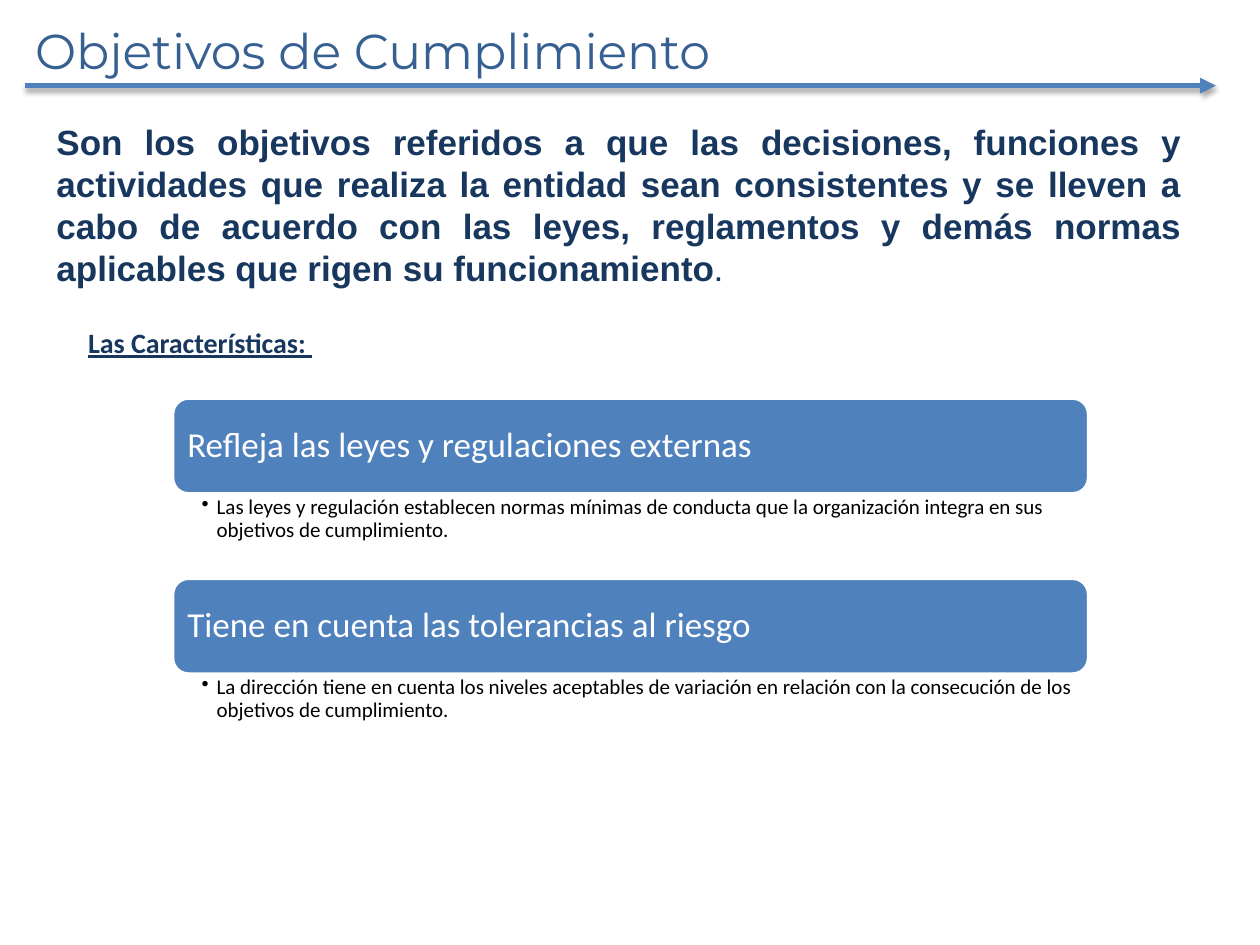
from lxml import etree
from pptx import Presentation
from pptx.dml.color import RGBColor
from pptx.enum.shapes import MSO_CONNECTOR, MSO_SHAPE
from pptx.enum.text import MSO_ANCHOR, PP_ALIGN
from pptx.oxml import parse_xml
from pptx.oxml.ns import nsdecls, qn
from pptx.util import Inches, Pt

LEFT, JUSTIFY = PP_ALIGN.LEFT, PP_ALIGN.JUSTIFY
TOP, MIDDLE = MSO_ANCHOR.TOP, MSO_ANCHOR.MIDDLE
C = {"title": "376092", "navy": "17375E", "blue": "4F81BD",
     "white": "FFFFFF", "black": "000000"}


def write(sp, text, size, color, font="Calibri", bold=False, underline=False,
          align=LEFT, anchor=MIDDLE, insets=(0.1, 0.05, 0.1, 0.05),
          spacing=None, indent=0, bullet=None):
    """Fill a shape with one paragraph and return that paragraph."""
    tf = sp.text_frame
    tf.word_wrap = True
    tf.vertical_anchor = anchor
    tf.margin_left, tf.margin_top, tf.margin_right, tf.margin_bottom = map(Inches, insets)
    p = tf.paragraphs[0]
    p.alignment = align
    if spacing:
        p.line_spacing = spacing
    pPr = p._p.get_or_add_pPr()
    if indent:
        pPr.set("marL", str(Inches(indent)))
    if bullet:
        pPr.set("indent", str(-Inches(indent)))
        etree.SubElement(pPr, qn("a:buChar")).set("char", bullet)
    r = p.add_run()
    r.text = text
    r.font.size, r.font.name = Pt(size), font
    r.font.bold, r.font.underline = bold, underline
    r.font.color.rgb = RGBColor.from_string(C[color])
    return p


def box(x, y, w, h):
    return s.shapes.add_textbox(Inches(x), Inches(y), Inches(w), Inches(h))


prs = Presentation()
prs.slide_width, prs.slide_height = Inches(10), Inches(7.5)
s = prs.slides.add_slide(prs.slide_layouts[6])

# Title and arrow below it
write(box(0.18, 0.11, 9.45, 0.57), "Objetivos de Cumplimiento", 28, "title",
      font="Montserrat", anchor=TOP)
arrow = s.shapes.add_connector(MSO_CONNECTOR.STRAIGHT, Inches(0.2), Inches(0.68),
                               Inches(9.65), Inches(0.68))
arrow.line.color.rgb = RGBColor.from_string(C["blue"])
arrow.line.width = Pt(3)
etree.SubElement(arrow.line._get_or_add_ln(), qn("a:tailEnd")).set("type", "triangle")
arrow._element.spPr.append(parse_xml(
    f'<a:effectLst {nsdecls("a")}><a:outerShdw blurRad="{Pt(3.1)}" dist="{Pt(1.8)}" '
    f'dir="5400000" rotWithShape="0"><a:srgbClr val="{C["black"]}">'
    '<a:alpha val="35000"/></a:srgbClr></a:outerShdw></a:effectLst>'))

# Definition
p = write(box(0.35, 0.9, 9.13, 1.45),
          "Son los objetivos referidos a que las decisiones, funciones y actividades "
          "que realiza la entidad sean consistentes y se lleven a cabo de acuerdo con "
          "las leyes, reglamentos y demás normas aplicables que rigen su funcionamiento",
          20, "navy", font="Arial", bold=True, align=JUSTIFY)
r = p.add_run()
r.text = "."
r.font.size, r.font.name, r.font.bold = Pt(14), "Arial", True
r.font.color.rgb = RGBColor.from_string(C["navy"])

# Heading of the list
write(box(0.35, 2.54, 4.92, 0.35), "Las Características: ", 16, "navy",
      bold=True, underline=True, indent=0.25)

# Characteristics: a banner with its explanation below
items = [
    ("Refleja las leyes y regulaciones externas",
     "Las leyes y regulación establecen normas mínimas de conducta que la "
     "organización integra en sus objetivos de cumplimiento."),
    ("Tiene en cuenta las tolerancias al riesgo",
     "La dirección tiene en cuenta los niveles aceptables de variación en relación "
     "con la consecución de los objetivos de cumplimiento."),
]
X, Y, W, BANNER_H, DETAIL_H = 1.37, 3.16, 7.27, 0.76, 0.67
for i, (heading, detail) in enumerate(items):
    y = Y + i * (BANNER_H + DETAIL_H)
    sp = s.shapes.add_shape(MSO_SHAPE.ROUNDED_RECTANGLE, Inches(X), Inches(y),
                            Inches(W), Inches(BANNER_H))
    sp.shadow.inherit = False
    sp.fill.solid()
    sp.fill.fore_color.rgb = RGBColor.from_string(C["blue"])
    sp.line.color.rgb = RGBColor.from_string(C["white"])
    sp.line.width = Pt(2)
    write(sp, heading, 20, "white", insets=(0.08,) * 4, spacing=0.9)
    write(box(X, y + BANNER_H, W, DETAIL_H), detail, 12, "black", anchor=TOP,
          insets=(0.23, 0.02, 0.09, 0.02), spacing=0.9, indent=0.12, bullet="•")

prs.save("out.pptx")
